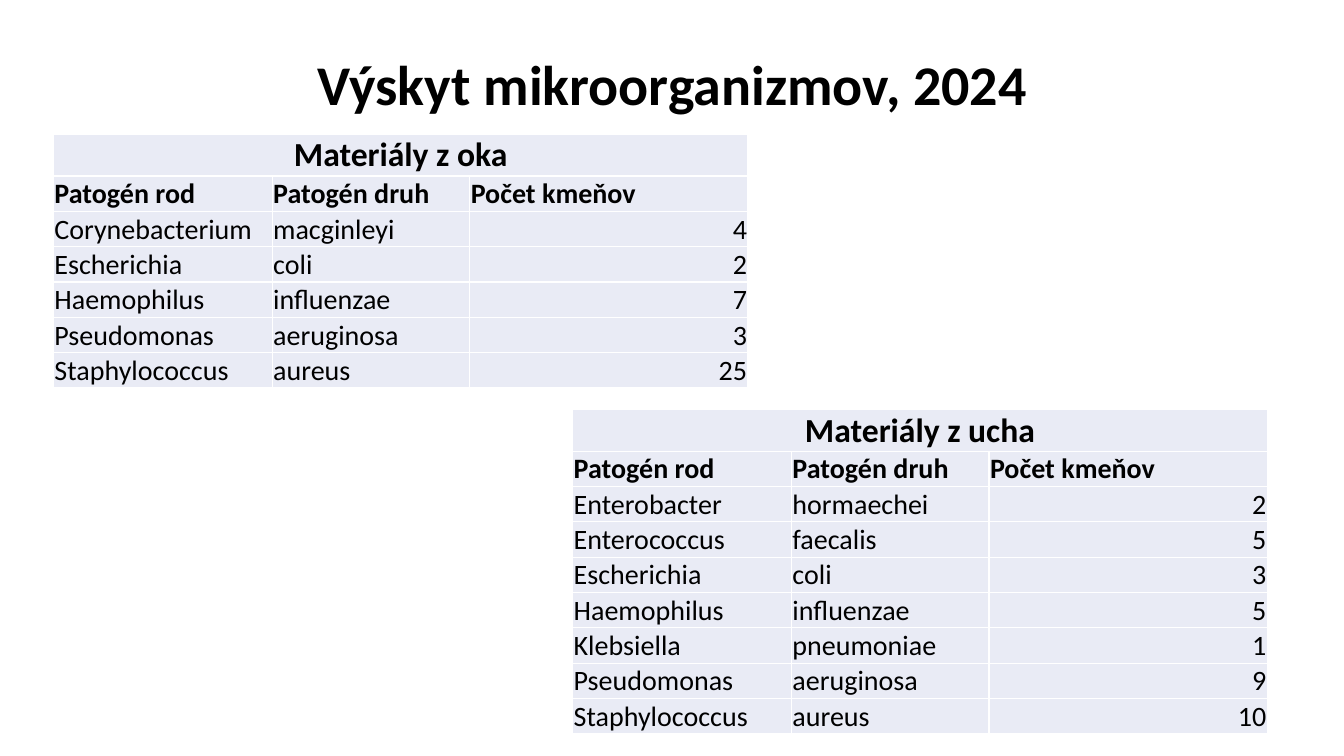
"""Build a slide with two tables of microorganism counts."""
from lxml.etree import SubElement as Sub
from pptx import Presentation
from pptx.dml.color import RGBColor
from pptx.enum.text import MSO_ANCHOR as Anchor, PP_ALIGN as Align
from pptx.oxml.ns import qn
from pptx.util import Inches, Pt


def write(frame, text, size=20, bold=False, align=Align.LEFT, color="000000"):
    """Put one formatted line of text into a frame."""
    para = frame.paragraphs[0]
    para.alignment = align
    run = para.add_run()
    run.text = text
    font = run.font
    font.name, font.size, font.bold = "Calibri", Pt(size), bold
    font.color.rgb = RGBColor.from_string(color)
    return para


def style(cell, fill="E9EBF5", edge="FFFFFF"):
    """Set the margins, borders and fill of a cell."""
    cell.margin_left = cell.margin_right = cell.margin_top = Inches(0.01)
    cell.margin_bottom = 0
    cell.vertical_anchor = Anchor.BOTTOM
    props = cell._tc.get_or_add_tcPr()
    for side in ("lnL", "lnR", "lnT", "lnB"):
        line = Sub(props, qn("a:" + side), w=str(Pt(1)))
        Sub(Sub(line, qn("a:solidFill")), qn("a:srgbClr"), val=edge)
    cell.fill.solid()
    cell.fill.fore_color.rgb = RGBColor.from_string(fill)


prs = Presentation()
prs.slide_width, prs.slide_height = Inches(13.33), Inches(7.5)
slide = prs.slides.add_slide(prs.slide_layouts[5])

title = slide.shapes.title
title.left, title.top = Inches(2.49), Inches(0.4)
title.width, title.height = Inches(8.35), Inches(0.93)
title.text_frame.vertical_anchor = Anchor.MIDDLE
head = write(title.text_frame, "Výskyt mikroorganizmov, 2024", size=40, bold=True, align=Align.CENTER)
head.line_spacing = 0.9

names = ("Patogén rod", "Patogén druh", "Počet kmeňov")
widths = (2.17, 1.96, 2.76)
top_row, row_high = 0.41, 0.34

eye = [
    ("Corynebacterium", "macginleyi", 4),
    ("Escherichia", "coli", 2),
    ("Haemophilus", "influenzae", 7),
    ("Pseudomonas", "aeruginosa", 3),
    ("Staphylococcus", "aureus", 25),
]
ear = [
    ("Enterobacter", "hormaechei", 2),
    ("Enterococcus", "faecalis", 5),
    ("Escherichia", "coli", 3),
    ("Haemophilus", "influenzae", 5),
    ("Klebsiella", "pneumoniae", 1),
    ("Pseudomonas", "aeruginosa", 9),
    ("Staphylococcus", "aureus", 10),
]

for label, left, top, data in (
    ("Materiály z oka", 0.53, 1.33, eye),
    ("Materiály z ucha", 5.68, 4.06, ear),
):
    rows = [names, *data]
    high = top_row + row_high * len(rows)
    table = slide.shapes.add_table(
        len(rows) + 1, len(names), Inches(left), Inches(top), Inches(sum(widths)), Inches(high)
    ).table
    table.first_row = table.horz_banding = False
    for col, width in zip(table.columns, widths):
        col.width = Inches(width)
    for row in table.rows:
        row.height = Inches(row_high)
    table.rows[0].height = Inches(top_row)
    for cell in table.iter_cells():
        style(cell)

    table.cell(0, 0).merge(table.cell(0, 2))
    write(table.cell(0, 0).text_frame, label, size=24, bold=True, align=Align.CENTER)
    for r, row in enumerate(rows, 1):
        for c, value in enumerate(row):
            side = Align.RIGHT if isinstance(value, int) else Align.LEFT
            write(table.cell(r, c).text_frame, str(value), bold=r == 1, align=side)

prs.save("out.pptx")
